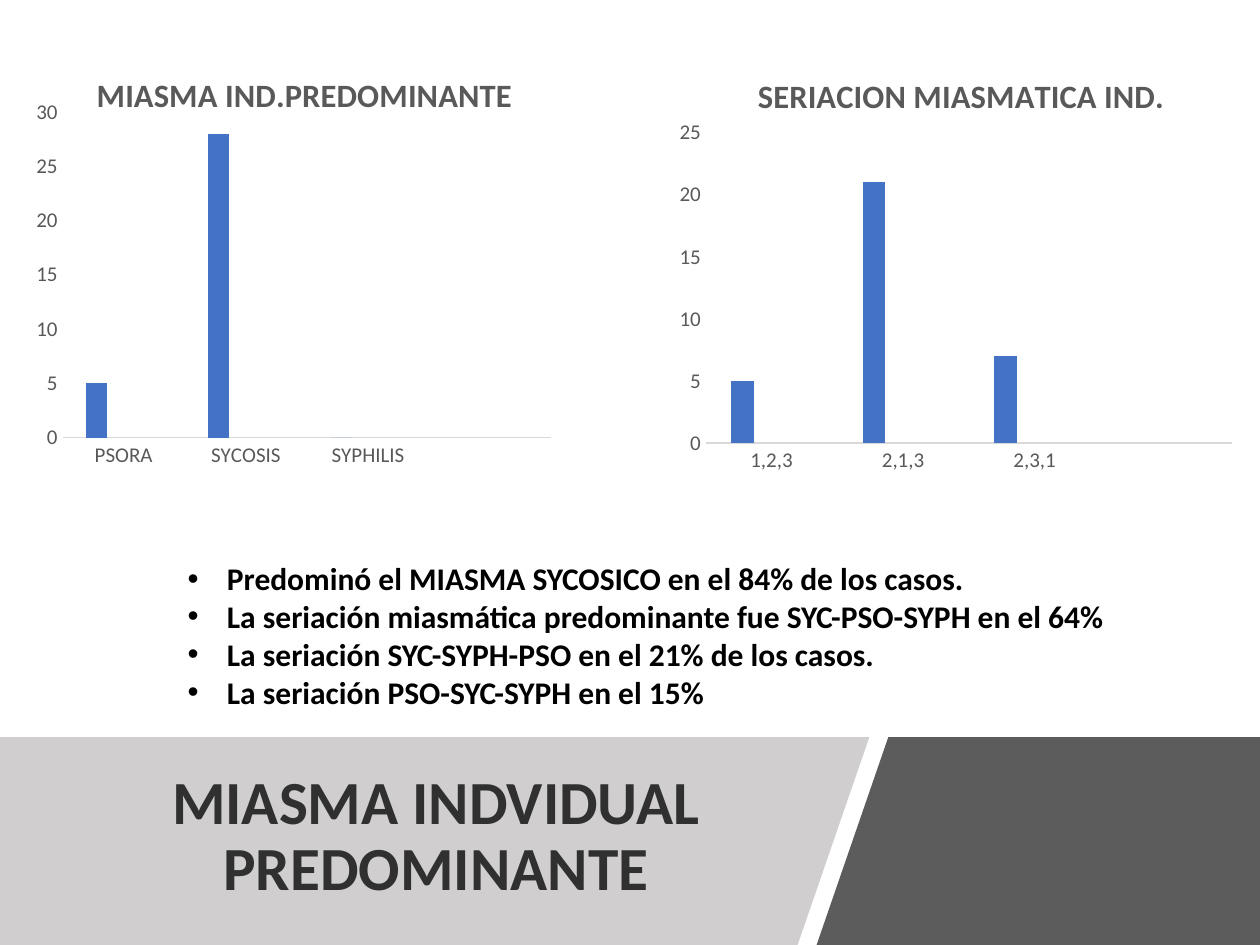
from lxml import etree
from pptx import Presentation
from pptx.chart.data import CategoryChartData
from pptx.dml.color import RGBColor
from pptx.enum.chart import XL_CHART_TYPE, XL_TICK_MARK
from pptx.enum.text import MSO_ANCHOR, MSO_AUTO_SIZE, PP_ALIGN
from pptx.oxml.ns import qn
from pptx.util import Pt

COLUMN = XL_CHART_TYPE.COLUMN_CLUSTERED
NO_TICK = XL_TICK_MARK.NONE
MIDDLE = MSO_ANCHOR.MIDDLE
CENTER = PP_ALIGN.CENTER
NO_FIT = MSO_AUTO_SIZE.NONE

BLACK = RGBColor(0x00, 0x00, 0x00)
INK = RGBColor(0x30, 0x30, 0x30)
LABEL = RGBColor(0x59, 0x59, 0x59)
AXIS = RGBColor(0xD9, 0xD9, 0xD9)
BAND = RGBColor(0xD0, 0xCE, 0xCE)
DARK = RGBColor(0x40, 0x40, 0x40)
SERIES = [RGBColor(0x44, 0x72, 0xC4), RGBColor(0xED, 0x7D, 0x31), RGBColor(0xA5, 0xA5, 0xA5)]

FORMATS = {
    "title": {"name": "Calibri", "size": Pt(35), "bold": True},
    "body": {"name": "Calibri", "size": Pt(18), "bold": True},
    "chart": {"name": "Calibri", "size": Pt(10), "bold": False},
    "chart_title": {"name": "Calibri", "size": Pt(18.6), "bold": True},
    "axis": {"name": "Calibri", "size": Pt(12), "bold": False},
}


class Deck:
    def __init__(self, width, height):
        self.prs = Presentation()
        self.prs.slide_width, self.prs.slide_height = Pt(width), Pt(height)
        self.s = self.prs.slides.add_slide(self.prs.slide_layouts[5])

    def font(self, font, style, color):
        for key, value in FORMATS[style].items():
            setattr(font, key, value)
        font.color.rgb = color

    def title(self, text, box):
        sp = self.s.shapes.title
        sp.left, sp.top, sp.width, sp.height = map(Pt, box)
        sp.element.getparent().append(sp.element)
        tf = sp.text_frame
        for key, value in {"word_wrap": True, "auto_size": NO_FIT, "vertical_anchor": MIDDLE}.items():
            setattr(tf, key, value)
        p = tf.paragraphs[0]
        p.alignment, p.line_spacing = CENTER, 0.9
        r = p.add_run()
        r.text = text
        self.font(r.font, "title", INK)

    def polygon(self, points, color, opacity=100):
        points = [(Pt(x), Pt(y)) for x, y in points]
        fb = self.s.shapes.build_freeform(*points[0])
        fb.add_line_segments(points[1:], close=True)
        sp = fb.convert_to_shape()
        sp.shadow.inherit = False
        sp.line.fill.background()
        sp.fill.solid()
        sp.fill.fore_color.rgb = color
        if opacity < 100:
            clr = sp.element.spPr.find(".//" + qn("a:srgbClr"))
            etree.SubElement(clr, qn("a:alpha"), val=str(opacity * 1000))

    def bullets(self, lines, box, indent):
        sp = self.s.shapes.add_textbox(*map(Pt, box))
        tf = sp.text_frame
        tf.word_wrap = False
        for i, line in enumerate(lines):
            p = tf.add_paragraph() if i else tf.paragraphs[0]
            r = p.add_run()
            r.text = line
            self.font(r.font, "body", BLACK)
            pPr = p._p.get_or_add_pPr()
            pPr.set("marL", str(Pt(indent)))
            pPr.set("indent", str(-Pt(indent)))
            etree.SubElement(pPr, qn("a:buFont"), typeface="Arial")
            etree.SubElement(pPr, qn("a:buChar"), char="•")

    def place(self, parent, index, values):
        for old in parent.findall(qn("c:layout")):
            parent.remove(old)
        layout = etree.Element(qn("c:layout"))
        manual = etree.SubElement(layout, qn("c:manualLayout"))
        for tag, value in values.items():
            etree.SubElement(manual, qn("c:" + tag), val=str(value))
        parent.insert(index, layout)

    def chart(self, text, cats, values, top_value, box, title_at, plot):
        data = CategoryChartData()
        data.categories = cats + [""]
        blank = [None] * (len(cats) + 1)
        for i, vals in enumerate([values + [None], blank, blank], 1):
            data.add_series(f"Series {i}", vals)
        chart = self.s.shapes.add_chart(COLUMN, *map(Pt, box), data).chart
        self.font(chart.font, "chart", BLACK)
        chart.has_legend = False
        chart.has_title = True
        p = chart.chart_title.text_frame.paragraphs[0]
        r = p.add_run()
        r.text = text
        self.font(r.font, "chart_title", LABEL)
        edge = {"xMode": "edge", "yMode": "edge"}
        self.place(chart.chart_title._element, 1, {**edge, **dict(zip("xy", title_at))})
        area = chart._chartSpace.find(".//" + qn("c:plotArea"))
        self.place(area, 0, {"layoutTarget": "inner", **edge, **dict(zip("xywh", plot))})
        bars = chart.plots[0]
        for key, value in {"gap_width": 219, "overlap": -27, "vary_by_categories": False}.items():
            setattr(bars, key, value)
        for series, color in zip(bars.series, SERIES):
            series.format.fill.solid()
            series.format.fill.fore_color.rgb = color
        for axis in (chart.category_axis, chart.value_axis):
            axis.has_major_gridlines = False
            axis.major_tick_mark = axis.minor_tick_mark = NO_TICK
            self.font(axis.tick_labels.font, "axis", LABEL)
        line = chart.category_axis.format.line
        line.color.rgb, line.width = AXIS, Pt(0.75)
        scale = chart.value_axis
        scale.format.line.fill.background()
        scale.minimum_scale, scale.maximum_scale, scale.major_unit = 0, top_value, 5


def main():
    width, height, band_top = 720, 540, 421.2
    deck = Deck(width, height)
    deck.polygon([(0, band_top), (496.8, band_top), (455.8, height), (0, height)], BAND)
    deck.title("MIASMA INDVIDUAL PREDOMINANTE", (49.7, 435.6, 398.9, 86.4))
    deck.polygon([(507.6, band_top), (width, band_top), (width, height), (466.6, height)], DARK, 85)
    deck.bullets([
        "Predominó el MIASMA SYCOSICO en el 84% de los casos.",
        "La seriación miasmática predominante fue SYC-PSO-SYPH en el 64%",
        "La seriación SYC-SYPH-PSO en el 21% de los casos.",
        "La seriación PSO-SYC-SYPH en el 15%",
    ], (100.1, 316.1, 543.6, 94.3), 22.5)
    deck.chart("MIASMA IND.PREDOMINANTE", ["PSORA", "SYCOSIS", "SYPHILIS"], [5, 28, 0], 30,
               (10.1, 25.2, 321.1, 258.5), (0.13, 0.05), (0.08, 0.15, 0.87, 0.72))
    deck.chart("SERIACION MIASMATICA IND.", ["1,2,3", "2,1,3", "2,3,1"], [5, 21, 7], 25,
               (380.2, 25.9, 330.5, 249.8), (0.15, 0.05), (0.07, 0.2, 0.91, 0.71))
    deck.prs.save("out.pptx")


if __name__ == "__main__":
    main()
